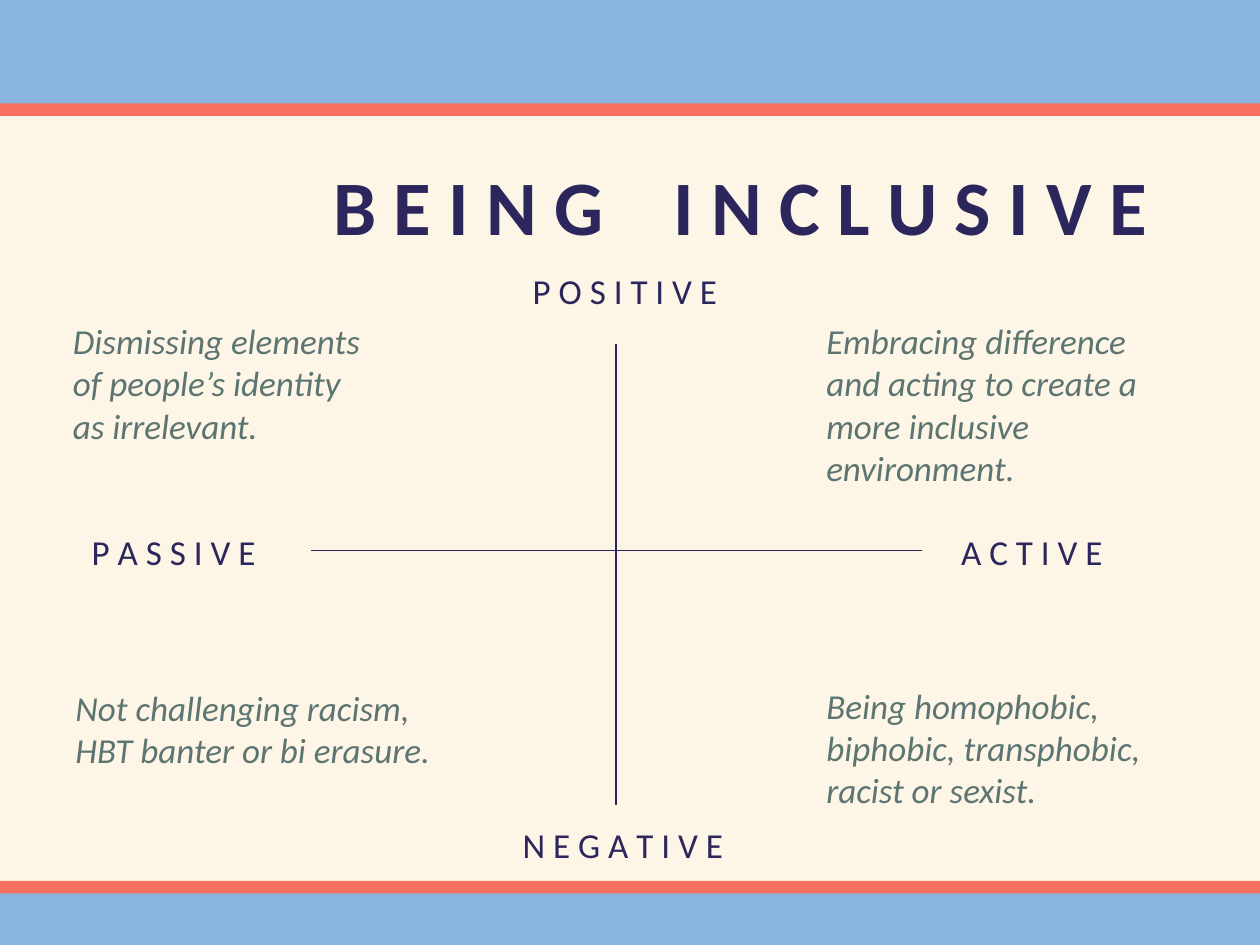
from dataclasses import dataclass

from lxml.etree import SubElement
from pptx import Presentation
from pptx.dml.color import RGBColor
from pptx.enum.shapes import MSO_CONNECTOR, MSO_SHAPE
from pptx.enum.text import MSO_ANCHOR, MSO_AUTO_SIZE, PP_ALIGN
from pptx.oxml.ns import qn
from pptx.slide import Slide
from pptx.text.text import TextFrame
from pptx.util import Inches, Pt


@dataclass(frozen=True)
class Theme:
    font: str = "Calibri"
    title_size: int = 44
    text_size: int = 20
    cream: RGBColor = RGBColor(0xFD, 0xF5, 0xE6)
    coral: RGBColor = RGBColor(0xF8, 0x70, 0x60)
    blue: RGBColor = RGBColor(0x8A, 0xB5, 0xE1)
    navy: RGBColor = RGBColor(0x2B, 0x26, 0x5C)
    axis: RGBColor = RGBColor(0x29, 0x24, 0x5B)
    sage: RGBColor = RGBColor(0x5D, 0x75, 0x72)


@dataclass(frozen=True)
class Band:
    top: float
    height: float
    color: RGBColor


@dataclass(frozen=True)
class Axis:
    start: tuple[float, float]
    end: tuple[float, float]


@dataclass(frozen=True)
class Caption:
    text: str
    left: float
    top: float
    width: float
    height: float


THEME = Theme()
PAGE_WIDTH, PAGE_HEIGHT = 10, 7.5
CENTER_X, CENTER_Y = 4.89, 4.37

BANDS = [
    Band(6.99, 0.51, THEME.coral),
    Band(0.1, 0.82, THEME.coral),
    Band(0, 0.82, THEME.blue),
    Band(7.09, 0.41, THEME.blue),
]
AXES = [
    Axis((CENTER_X, 2.73), (CENTER_X, 6.39)),
    Axis((7.32, CENTER_Y), (2.47, CENTER_Y)),
]
AXIS_LABELS = [
    Caption("P O S I T I V E", 4.13, 2.09, 1.73, 0.44),
    Caption("N E G A T I V E", 4.05, 6.49, 1.82, 0.44),
    Caption("A C T I V E", 7.53, 4.16, 1.73, 0.44),
    Caption("P A S S I V E", 0.63, 4.16, 1.73, 0.44),
]
EXAMPLES = [
    Caption("Dismissing elements of people’s identity as irrelevant.",
            0.48, 2.49, 2.56, 1.11),
    Caption("Embracing difference and acting to create a more inclusive environment.",
            6.46, 2.49, 3.04, 1.45),
    Caption("Being homophobic, biphobic, transphobic, racist or sexist.",
            6.46, 5.38, 3.04, 1.11),
    Caption("Not challenging racism, HBT banter or bi erasure.",
            0.5, 5.4, 3.04, 0.77),
]


def write_text(frame: TextFrame, text: str, size: int, color: RGBColor,
               bold: bool = False, italic: bool = False) -> None:
    frame.text = text
    frame.word_wrap = True
    font = frame.paragraphs[0].runs[0].font
    font.name, font.size = THEME.font, Pt(size)
    font.bold, font.italic = bold, italic
    font.color.rgb = color


def add_band(page: Slide, band: Band) -> None:
    box = page.shapes.add_shape(MSO_SHAPE.RECTANGLE, 0, Inches(band.top),
                                Inches(PAGE_WIDTH), Inches(band.height))
    box.shadow.inherit = False
    box.fill.solid()
    box.fill.fore_color.rgb = band.color
    box.line.fill.background()


def add_title(page: Slide, text: str) -> None:
    title = page.shapes.title
    title.left, title.top = Inches(2.26), Inches(1)
    title.width, title.height = Inches(7.24), Inches(1.25)
    frame = title.text_frame
    write_text(frame, text, THEME.title_size, THEME.navy, bold=True)
    frame.vertical_anchor = MSO_ANCHOR.MIDDLE
    frame.auto_size = MSO_AUTO_SIZE.NONE
    frame.paragraphs[0].alignment = PP_ALIGN.CENTER


def add_axis(page: Slide, axis: Axis) -> None:
    points = [Inches(value) for value in axis.start + axis.end]
    line = page.shapes.add_connector(MSO_CONNECTOR.STRAIGHT, *points)
    line.line.color.rgb = THEME.axis
    line.line.width = Pt(0.75)
    SubElement(line._element.spPr, qn("a:effectLst"))


def add_caption(page: Slide, caption: Caption, color: RGBColor,
                italic: bool = False) -> None:
    box = page.shapes.add_textbox(Inches(caption.left), Inches(caption.top),
                                  Inches(caption.width), Inches(caption.height))
    write_text(box.text_frame, caption.text, THEME.text_size, color, italic=italic)
    box.text_frame.auto_size = MSO_AUTO_SIZE.SHAPE_TO_FIT_TEXT


def main() -> None:
    deck = Presentation()
    deck.slide_width, deck.slide_height = Inches(PAGE_WIDTH), Inches(PAGE_HEIGHT)
    page = deck.slides.add_slide(deck.slide_layouts[5])  # title only
    page.background.fill.solid()
    page.background.fill.fore_color.rgb = THEME.cream

    # Bands at the top and bottom edges
    for band in BANDS:
        add_band(page, band)

    add_title(page, "B E I N G    I N C L U S I V E")

    # Crossed axes and the names of their ends
    for axis in AXES:
        add_axis(page, axis)
    for label in AXIS_LABELS:
        add_caption(page, label, THEME.navy)

    # One example in each quadrant
    for example in EXAMPLES:
        add_caption(page, example, THEME.sage, italic=True)

    deck.save("out.pptx")


if __name__ == "__main__":
    main()
